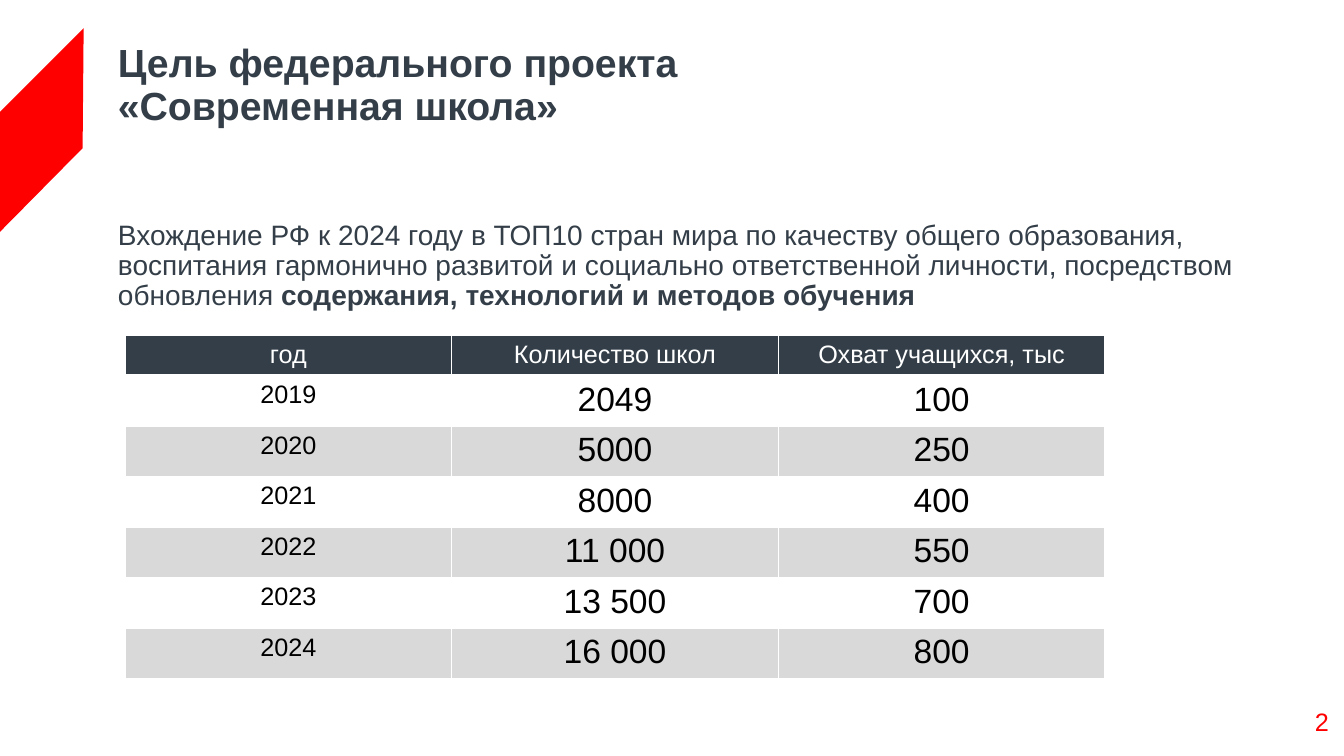
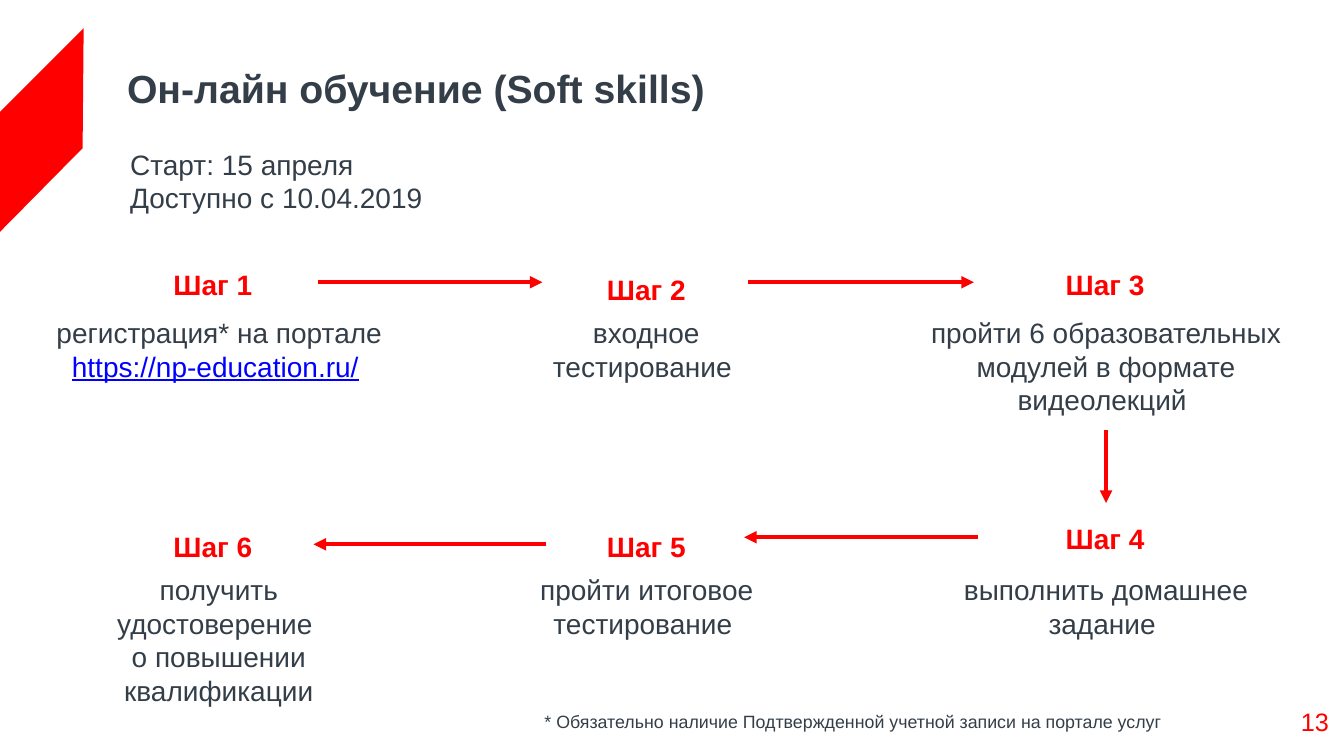
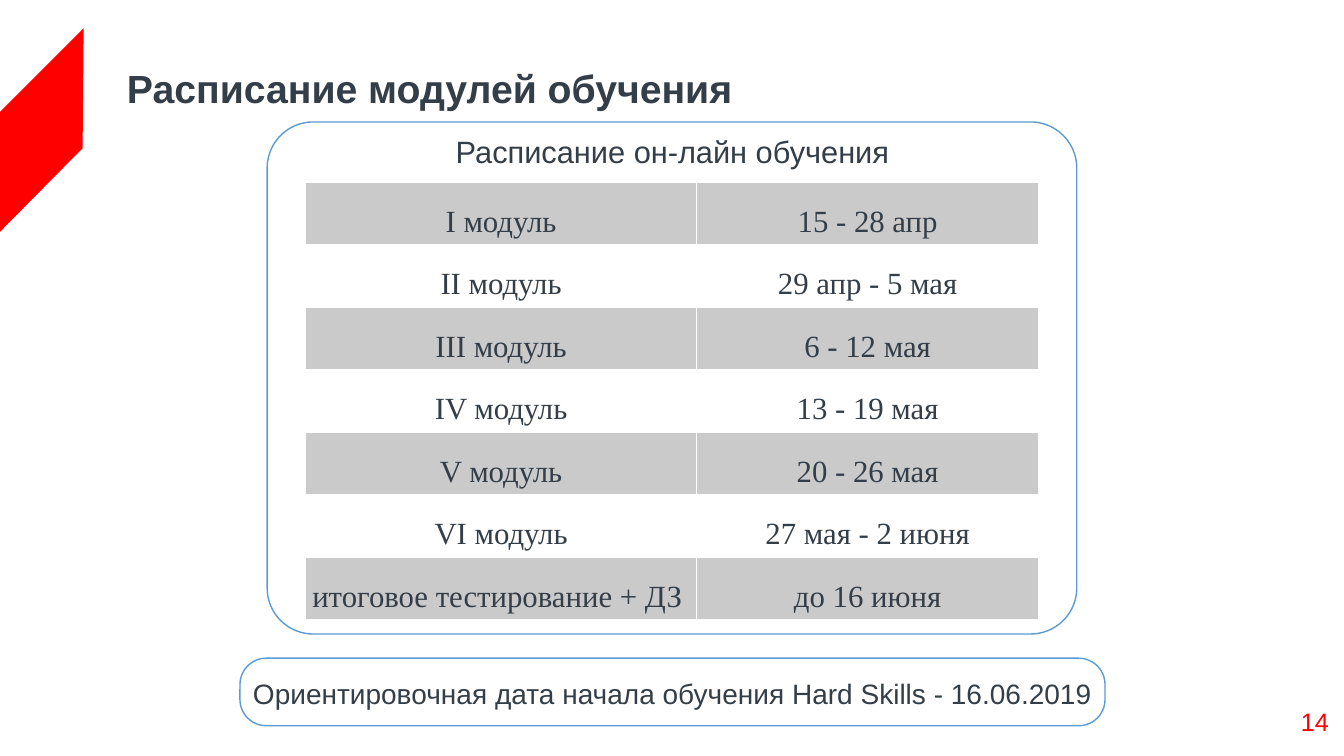
import pptx
import pptx.dml.color
import pptx.enum.shapes
import pptx.enum.text
import pptx.oxml
import pptx.oxml.ns
import pptx.util

Inches = pptx.util.Inches
Pt = pptx.util.Pt
RGBColor = pptx.dml.color.RGBColor
Align = pptx.enum.text.PP_ALIGN
Anchor = pptx.enum.text.MSO_ANCHOR
Shapes = pptx.enum.shapes.MSO_SHAPE

RED = RGBColor(0xFF, 0x00, 0x00)
SLATE = RGBColor(0x33, 0x3E, 0x48)
WHITE = RGBColor(0xFF, 0xFF, 0xFF)
BLACK = RGBColor(0x00, 0x00, 0x00)
BAND_LIGHT = RGBColor(0xD9, 0xD9, 0xD9)
BAND_DARK = RGBColor(0xCA, 0xCA, 0xCA)
FRAME_BLUE = RGBColor(0x5B, 0x9B, 0xD5)
LINK_BLUE = RGBColor(0x00, 0x00, 0xFF)

BODY = {"name": "Arial", "size": Pt(20), "color": SLATE}
TITLE = {**BODY, "size": Pt(28), "bold": True}
STEP = {**BODY, "bold": True, "color": RED}
PAGE_NUMBER = {**BODY, "size": Pt(18), "color": RED}
SCHEDULE = {**BODY, "name": "Times New Roman", "size": Pt(22)}
MARGINS = ("margin_left", "margin_top", "margin_right", "margin_bottom")


class Deck:
    """Holds the shared style and the current slide."""

    def __init__(self):
        self.prs = pptx.Presentation()
        self.prs.slide_width = Inches(13.33)
        self.prs.slide_height = Inches(7.5)
        self.shapes = None

    def page(self, number, title, title_box):
        """Start a slide with the red corner, the page number and the title."""
        slide = self.prs.slides.add_slide(self.prs.slide_layouts[6])
        self.shapes = slide.shapes
        corner = [(0, 2.3), (0, 1.11), (0.83, 0.28), (0.82, 1.47)]
        points = [(Inches(x), Inches(y)) for x, y in corner]
        outline = self.shapes.build_freeform(*points[0], scale=1.0)
        outline.add_line_segments(points[1:], close=True)
        ribbon = outline.convert_to_shape()
        ribbon.shadow.inherit = False
        ribbon.fill.solid()
        ribbon.fill.fore_color.rgb = RED
        ribbon.line.fill.background()
        self.text((12.23, 6.96, 1, 0.39), [str(number)], PAGE_NUMBER, Align.RIGHT)
        self.text(title_box, [title], TITLE, anchor=Anchor.MIDDLE, spacing=0.9)

    def paragraph(self, paragraph, content, style, align=None, spacing=None):
        """Content is a string or a list of (text, style changes)."""
        layout = {"alignment": align, "line_spacing": spacing}
        for key, value in layout.items():
            setattr(paragraph, key, value)
        pieces = [(content, {})] if isinstance(content, str) else content
        for words, changes in pieces:
            values = {**style, **changes}
            color = values.pop("color")
            for number, line in enumerate(words.split("\n")):
                if number:
                    paragraph.add_line_break()
                run = paragraph.add_run()
                run.text = line
                run.font.color.rgb = color
                for key, value in values.items():
                    setattr(run.font, key, value)

    def text(self, box, paragraphs, style=BODY, align=None, anchor=Anchor.TOP,
             spacing=None, wrap=True):
        frame = self.shapes.add_textbox(*map(Inches, box)).text_frame
        frame.word_wrap = wrap
        frame.vertical_anchor = anchor
        for margin in MARGINS:
            setattr(frame, margin, Inches(0.05))
        for number, content in enumerate(paragraphs):
            paragraph = frame.add_paragraph() if number else frame.paragraphs[0]
            self.paragraph(paragraph, content, style, align, spacing)

    def table(self, left, top, widths, heights, rows, look):
        """Look gives (fill, style, bottom border) for a row and column."""
        grid = self.shapes.add_table(
            len(rows), len(widths), Inches(left), Inches(top),
            Inches(sum(widths)), Inches(sum(heights))).table
        grid.first_row = grid.horz_banding = False
        for column, width in zip(grid.columns, widths):
            column.width = Inches(width)
        for row, height in zip(grid.rows, heights):
            row.height = Inches(height)
        for r, row in enumerate(rows):
            for c, words in enumerate(row):
                cell = grid.cell(r, c)
                fill, style, bottom = look(r, c)
                self.borders(cell, bottom)
                cell.fill.solid()
                cell.fill.fore_color.rgb = fill
                for margin in MARGINS:
                    setattr(cell, margin, Inches(0.05))
                self.paragraph(cell.text_frame.paragraphs[0], words, style,
                               Align.CENTER)
        return grid

    def borders(self, cell, bottom):
        properties = cell._tc.get_or_add_tcPr()
        for side, width in (("L", 1), ("R", 1), ("T", 1), ("B", bottom)):
            properties.append(pptx.oxml.parse_xml(
                f'<a:ln{side} {pptx.oxml.ns.nsdecls("a")} w="{int(Pt(width))}">'
                f'<a:solidFill><a:srgbClr val="{WHITE}"/></a:solidFill>'
                f'</a:ln{side}>'))

    def arrow(self, x1, y1, x2, y2):
        connector = self.shapes.add_connector(
            pptx.enum.shapes.MSO_CONNECTOR.STRAIGHT,
            Inches(x1), Inches(y1), Inches(x2), Inches(y2))
        connector.line.color.rgb = RED
        connector.line.width = Pt(3)
        namespace = pptx.oxml.ns.nsdecls("a")
        connector.line._get_or_add_ln().append(
            pptx.oxml.parse_xml(f'<a:tailEnd {namespace} type="triangle"/>'))
        connector._element.spPr.append(
            pptx.oxml.parse_xml(f"<a:effectLst {namespace}/>"))

    def frame(self, box, rounding):
        outline = self.shapes.add_shape(Shapes.ROUNDED_RECTANGLE, *map(Inches, box))
        outline.adjustments[0] = rounding
        outline.shadow.inherit = False
        outline.fill.background()
        outline.line.color.rgb = FRAME_BLUE
        outline.line.width = Pt(1)


def goal_look(row, column):
    if row == 0:
        return SLATE, {**BODY, "size": Pt(18), "color": WHITE}, 3
    size = Pt(24 if column else 18)
    return (WHITE if row % 2 else BAND_LIGHT), {**BODY, "size": size, "color": BLACK}, 1


def schedule_look(row, column):
    return (WHITE if row % 2 else BAND_DARK), SCHEDULE, 1


def goal_slide(deck):
    deck.page(2, "Цель федерального проекта\n«Современная школа»",
              (1.12, 0.39, 6.86, 0.93))
    deck.text((1.12, 2.15, 12.03, 0.99), [[
        ("Вхождение РФ к 2024 году в ТОП10 стран мира по качеству общего "
         "образования, воспитания гармонично развитой и социально ответственной "
         "личности, посредством обновления ", {}),
        ("содержания, технологий и методов обучения", {"bold": True}),
    ]], anchor=Anchor.MIDDLE, spacing=0.9)
    deck.table(1.24, 3.33, [3.24] * 3, [0.4] + [0.5] * 6, [
        ("год", "Количество школ", "Охват учащихся, тыс"),
        ("2019", "2049", "100"),
        ("2020", "5000", "250"),
        ("2021", "8000", "400"),
        ("2022", "11 000", "550"),
        ("2023", "13 500", "700"),
        ("2024", "16 000", "800"),
    ], goal_look)


def steps_slide(deck):
    deck.page(13, "Он-лайн обучение (Soft skills)", (1.21, 0.4, 8.81, 1))
    deck.text((5.35, 7, 6.94, 0.37),
              ["* Обязательно наличие Подтвержденной учетной записи на портале услуг"],
              {**BODY, "size": Pt(12.7)})
    deck.text((1.24, 1.41, 3.01, 0.73), ["Старт: 15 апреля", "Доступно с 10.04.2019"],
              wrap=False)

    # Steps: number, label position, text left, top and width, text
    registration = [
        ("регистрация* на портале ", {}),
        ("https://np-education.ru/", {"color": LINK_BLUE, "underline": True}),
        (" ", {}),
    ]
    upper, lower = 3.08, 5.63
    steps = [
        (1, 1.67, 2.6, 0.24, upper, 3.87, registration),
        (2, 5.97, 2.65, 5.07, upper, 2.68, "входное тестирование "),
        (3, 10.52, 2.6, 9.11, upper, 3.72,
         "пройти 6 образовательных модулей в формате видеолекций "),
        (4, 10.52, 5.12, 9.11, lower, 3.72, "выполнить домашнее задание "),
        (5, 5.97, 5.2, 5, lower, 2.83, "пройти итоговое тестирование "),
        (6, 1.67, 5.2, 0.62, lower, 3.1,
         "получить удостоверение \nо повышении квалификации"),
    ]
    for number, label_x, label_y, left, top, width, words in steps:
        deck.text((label_x, label_y, 0.89, 0.41), [f"Шаг {number}"], STEP, wrap=False)
        deck.text((left, top, width, 1.05), [words], align=Align.CENTER)

    # Arrows from step to step
    for ends in [(3.15, 2.8, 5.38, 2.8), (7.42, 2.8, 9.66, 2.8),
                 (10.97, 4.27, 10.97, 4.99), (9.7, 5.33, 7.38, 5.33),
                 (5.42, 5.4, 3.11, 5.4)]:
        deck.arrow(*ends)


def schedule_slide(deck):
    deck.page(14, "Расписание модулей обучения", (1.21, 0.4, 7.26, 1))
    schedule = deck.table(3.03, 1.81, [3.88, 3.39], [0.62] * 7, [
        ("I модуль", "15 - 28 апр"),
        ("II модуль", "29 апр - 5 мая"),
        ("III модуль", "6 - 12 мая"),
        ("IV модуль", "13 - 19 мая"),
        ("V модуль", "20 - 26 мая"),
        ("VI модуль", "27 мая - 2 июня"),
        ("итоговое тестирование + ДЗ ", "до 16 июня"),
    ], schedule_look)
    for cell in schedule.iter_cells():
        cell.vertical_anchor = Anchor.MIDDLE
        cell.text_frame.paragraphs[0].line_spacing = 1.5
        for margin in MARGINS:
            setattr(cell, margin, 0)

    # Captions and their frames
    deck.text((2.41, 6.66, 8.52, 0.41),
              ["Ориентировочная дата начала обучения Hard Skills - 16.06.2019"],
              align=Align.CENTER)
    deck.text((3.03, 1.27, 7.28, 0.45), ["Расписание он-лайн обучения"],
              {**BODY, "size": Pt(22)}, Align.CENTER)
    deck.frame((2.38, 6.53, 8.58, 0.67), 0.39)
    deck.frame((2.65, 1.21, 8.03, 5.08), 0.09)


def main():
    deck = Deck()
    goal_slide(deck)
    steps_slide(deck)
    schedule_slide(deck)
    deck.prs.save("out.pptx")


if __name__ == "__main__":
    main()
